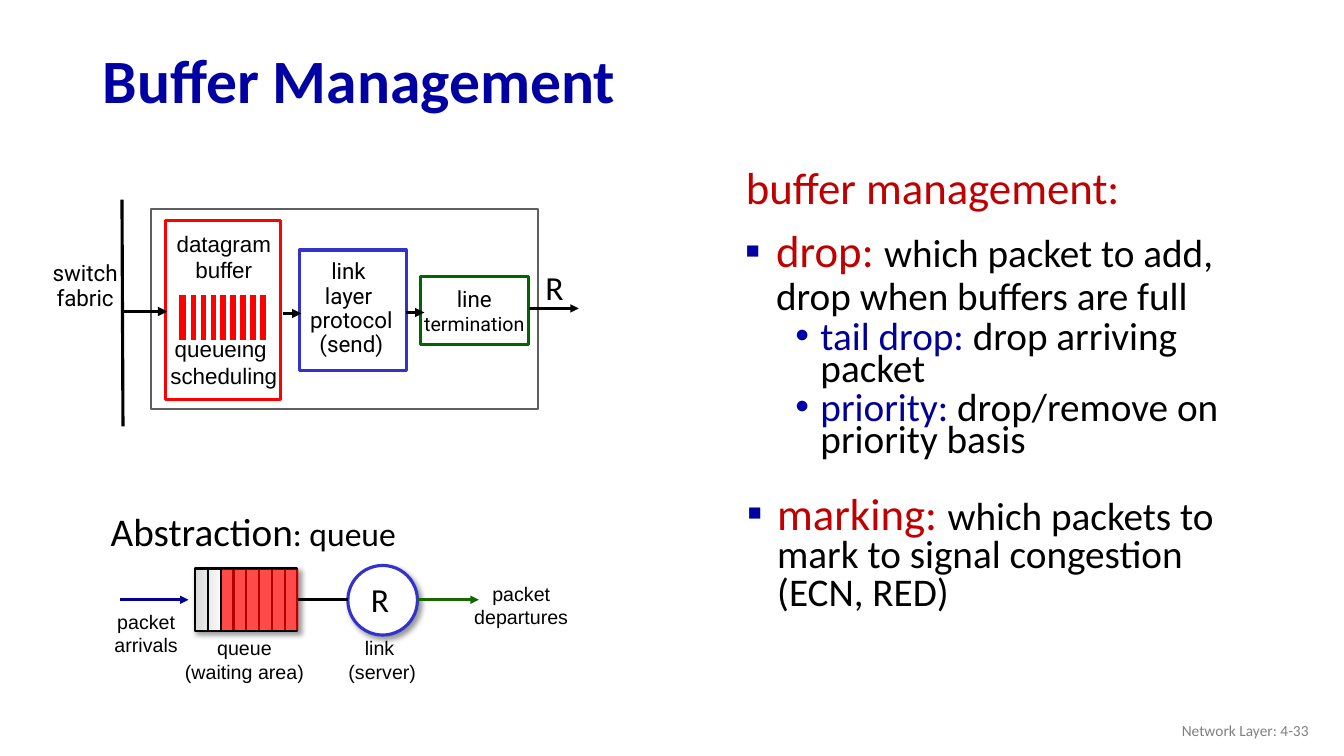
import pptx
import pptx.util
import pptx.dml.color
import pptx.enum.shapes
import pptx.enum.text
import pptx.oxml
import pptx.oxml.ns
from lxml import etree

Inches = pptx.util.Inches
Pt = pptx.util.Pt
SHAPES = pptx.enum.shapes.MSO_SHAPE
ALIGN = pptx.enum.text.PP_ALIGN
ANCHOR = pptx.enum.text.MSO_ANCHOR

BLACK, WHITE, RED, GREEN, BLUE = "000000", "FFFFFF", "FF0000", "006600", "3333CC"
NAVY, TITLE_BLUE, CRIMSON = "000099", "0000A3", "C00000"

TITLE = [dict(runs=[("Buffer Management", 44, TITLE_BLUE)], bold=True, spacing=0.9)]
FOOTER = [dict(runs=[("Network Layer: 4-33", 11, "808080")], align=ALIGN.RIGHT)]
SUB_ITEM = dict(level=1, indent=(0.76, -0.25), spacing=Pt(22.8), before=5,
                bullet=("•", "0000A8"))
POLICIES = [
    dict(runs=[("buffer management:", 32, CRIMSON)], indent=(0.26, -0.24), spacing=0.9),
    dict(runs=[("drop: ", 32, CRIMSON),
               ("which packet to add, drop when buffers are full", 28, BLACK)],
         indent=(0.32, -0.31), spacing=0.9, before=10, bullet=("▪", TITLE_BLUE)),
    dict(SUB_ITEM, runs=[("tail drop: ", 28, NAVY), ("drop arriving packet", 28, BLACK)]),
    dict(SUB_ITEM, runs=[("priority: ", 28, NAVY),
                         ("drop/remove on priority basis", 28, BLACK)]),
]
MARKING = [
    dict(runs=[("marking: ", 32, CRIMSON),
               ("which packets to mark to signal congestion (ECN, RED)", 28, BLACK)],
         indent=(0.45, -0.3), spacing=0.8, bullet=("▪", TITLE_BLUE)),
]
ABSTRACTION = [dict(runs=[("Abstraction", 28, BLACK), (": queue", 24, BLACK)])]
RATE = [dict(runs=[("R", 24, BLACK)])]

QUEUE_LABELS = [
    (("queue", "(waiting area)"), (1.73, 6.26, 1.39, 0.57)),
    (("packet", "arrivals"), (1.03, 6, 0.84, 0.57)),
    (("packet", "departures"), (4.6, 5.72, 1.14, 0.57)),
    (("link", " (server)"), (3.3, 6.26, 0.93, 0.57)),
]
PORT_ARROWS = [
    (2.81, 3.11, 2.99, 3.11),
    (4.03, 3.1, 4.21, 3.1),
]
BUFFER_BARS = dict(count=8, first=1.87, step=0.0986, top=2.92, bottom=3.38)
QUEUE_SLOTS = dict(count=7, first=2.06, step=0.128, top=5.64, bottom=6.25)


def color(value):
    return pptx.dml.color.RGBColor.from_string(value)


def add_xml(parent, tag, **attributes):
    element = etree.SubElement(parent, pptx.oxml.ns.qn(tag))
    for name, value in attributes.items():
        element.set(name, value)
    return element


def centered(lines, size, **options):
    return [dict(runs=[(line, size, BLACK)], align=ALIGN.CENTER, **options) for line in lines]


def write(shape, content, font="Calibri", anchor=ANCHOR.TOP, wrap=False):
    frame = shape.text_frame
    frame.word_wrap = wrap
    frame.vertical_anchor = anchor
    for index, item in enumerate(content):
        paragraph = frame.paragraphs[0] if index == 0 else frame.add_paragraph()
        properties = paragraph._p.get_or_add_pPr()
        if "indent" in item:
            left, first = item["indent"]
            properties.set("marL", str(Inches(left)))
            properties.set("indent", str(Inches(first)))
        if "bullet" in item:
            character, bullet_color = item["bullet"]
            add_xml(add_xml(properties, "a:buClr"), "a:srgbClr", val=bullet_color)
            add_xml(properties, "a:buFont", typeface="Arial")
            add_xml(properties, "a:buChar", char=character)
        paragraph.level = item.get("level", 0)
        paragraph.alignment = item.get("align", ALIGN.LEFT)
        paragraph.line_spacing = item.get("spacing", 1.0)
        paragraph.space_before = Pt(item.get("before", 0))
        for text, size, text_color in item["runs"]:
            run = paragraph.add_run()
            run.text = text
            run.font.name = font
            run.font.size = Pt(size)
            run.font.bold = item.get("bold", False)
            run.font.color.rgb = color(text_color)


def add_text(slide, box, content, **options):
    shape = slide.shapes.add_textbox(*map(Inches, box))
    write(shape, content, **options)


def add_box(slide, box, fill=WHITE, line=None, width=2.25, kind=SHAPES.RECTANGLE):
    shape = slide.shapes.add_shape(kind, *map(Inches, box))
    shape.shadow.inherit = False
    shape.fill.solid()
    shape.fill.fore_color.rgb = color(fill)
    if line:
        shape.line.color.rgb = color(line)
        shape.line.width = Pt(width)
    else:
        shape.line.fill.background()
    return shape


def add_line(slide, ends, line=BLACK, width=2.25, arrow=False):
    connector = slide.shapes.add_connector(
        pptx.enum.shapes.MSO_CONNECTOR.STRAIGHT, *map(Inches, ends))
    connector.line.color.rgb = color(line)
    connector.line.width = Pt(width)
    if arrow:
        add_xml(connector.line._get_or_add_ln(), "a:tailEnd", type="triangle")
    add_xml(connector._element.spPr, "a:effectLst")


def add_bars(slide, bars, line, width):
    for index in range(bars["count"]):
        x = bars["first"] + index * bars["step"]
        add_line(slide, (x, bars["top"], x, bars["bottom"]), line, width)


def cast_shadow(shape):
    effects = shape._element.spPr.find(pptx.oxml.ns.qn("a:effectLst"))
    shadow = add_xml(effects, "a:outerShdw", blurRad=str(Pt(4)), dist=str(Pt(3)),
                     dir="2700000", algn="tl", rotWithShape="0")
    add_xml(add_xml(shadow, "a:srgbClr", val=BLACK), "a:alpha", val="40000")


def draw_output_port(slide):
    add_box(slide, (1.5, 2.07, 3.84, 1.99), line="5F5F5F", width=1.5)
    termination = add_box(slide, (4.17, 2.74, 1.07, 0.68), line=GREEN)
    write(termination, centered(["line"], 16) + centered(["termination"], 14),
          font="Roboto", anchor=ANCHOR.MIDDLE)
    add_box(slide, (2.97, 2.48, 1.06, 1.2), line=BLUE)
    for ends in PORT_ARROWS:
        add_line(slide, ends, arrow=True)
    for left, lines in ((3, ("link ", "layer ", "protocol", "(send)")),
                        (0.36, ("switch", "fabric"))):
        label = add_box(slide, (left, 2.64 if left == 3 else 2.42, 0.97, 0.85))
        write(label, centered(lines, 16, spacing=0.9), font="Roboto", anchor=ANCHOR.MIDDLE)
    add_box(slide, (1.64, 2.19, 1.14, 1.77), line=RED)
    buffer_label = (centered(["datagram", "buffer"], 16)
                    + centered(["queueing "], 16, before=37) + centered(["scheduling"], 16))
    add_text(slide, (1.57, 2.23, 1.3, 1.72), buffer_label, font="Arial")
    add_box(slide, (1.75, 2.91, 0.91, 0.48), RED, WHITE, 3)
    add_bars(slide, BUFFER_BARS, WHITE, 3)
    add_line(slide, (1.21, 1.98, 1.22, 4.23))
    add_line(slide, (1.2, 3.09, 1.66, 3.09), arrow=True)
    add_line(slide, (5.25, 3.06, 5.74, 3.06), width=2, arrow=True)
    add_text(slide, (5.31, 2.6, 0.38, 0.5), RATE)


def draw_queue(slide):
    waiting_area = add_box(slide, (1.93, 5.64, 1.02, 0.62), line=BLACK, width=1.5)
    waiting_area.fill.gradient()
    waiting_area.fill.gradient_angle = 0
    for stop, shade, position in zip(waiting_area.fill.gradient_stops,
                                     ("D9D9D9", WHITE), (0, 0.3)):
        stop.color.rgb = color(shade)
        stop.position = position
    cast_shadow(waiting_area)
    add_bars(slide, QUEUE_SLOTS, BLACK, 1.5)
    packets = add_box(slide, (2.2, 5.65, 0.76, 0.6), RED)
    fill_color = packets._element.spPr.find(".//" + pptx.oxml.ns.qn("a:srgbClr"))
    add_xml(fill_color, "a:alpha", val="71000")
    server = add_box(slide, (3.45, 5.61, 0.69, 0.69), line=BLUE, kind=SHAPES.OVAL)
    cast_shadow(server)
    add_line(slide, (1.19, 5.95, 1.87, 5.95), NAVY, 2, arrow=True)
    add_line(slide, (4.14, 5.95, 4.75, 5.95), "186600", 2, arrow=True)
    add_line(slide, (2.96, 5.95, 3.45, 5.95), width=2)
    for lines, box in QUEUE_LABELS:
        add_text(slide, box, centered(lines, 14), font="Arial")
    add_text(slide, (1, 4.98, 3.07, 0.57), ABSTRACTION)
    add_text(slide, (3.58, 5.69, 0.38, 0.5), RATE)


def main():
    presentation = pptx.Presentation()
    presentation.slide_width = Inches(13.33)
    presentation.slide_height = Inches(7.5)
    slide = presentation.slides.add_slide(presentation.slide_layouts[6])
    add_text(slide, (0.92, 0.34, 11.5, 0.98), TITLE, anchor=ANCHOR.MIDDLE, wrap=True)
    add_text(slide, (7.28, 1.6, 5.43, 5.48), POLICIES, wrap=True)
    draw_output_port(slide)
    add_text(slide, (7.16, 4.87, 5.43, 1.33), MARKING, wrap=True)
    draw_queue(slide)
    add_text(slide, (10.08, 7.05, 3, 0.4), FOOTER, anchor=ANCHOR.MIDDLE, wrap=True)
    presentation.save("out.pptx")


if __name__ == "__main__":
    main()
